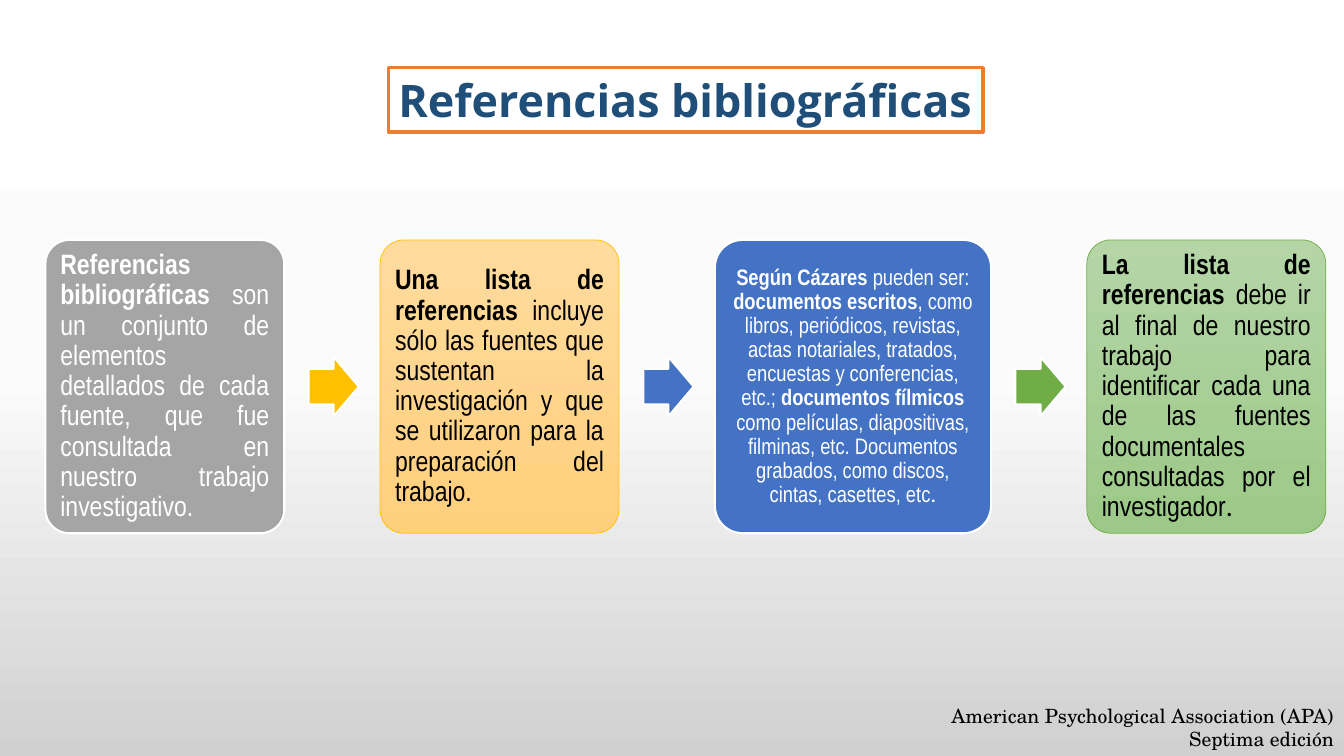
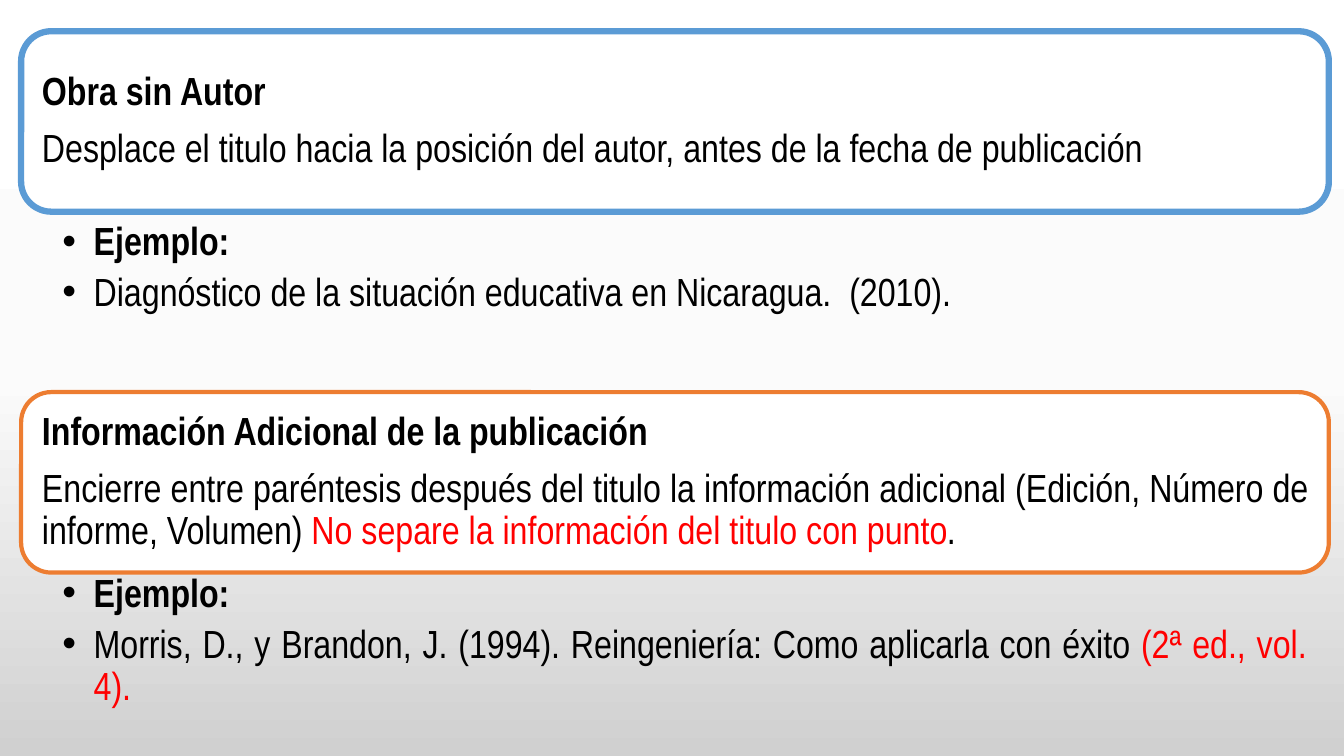
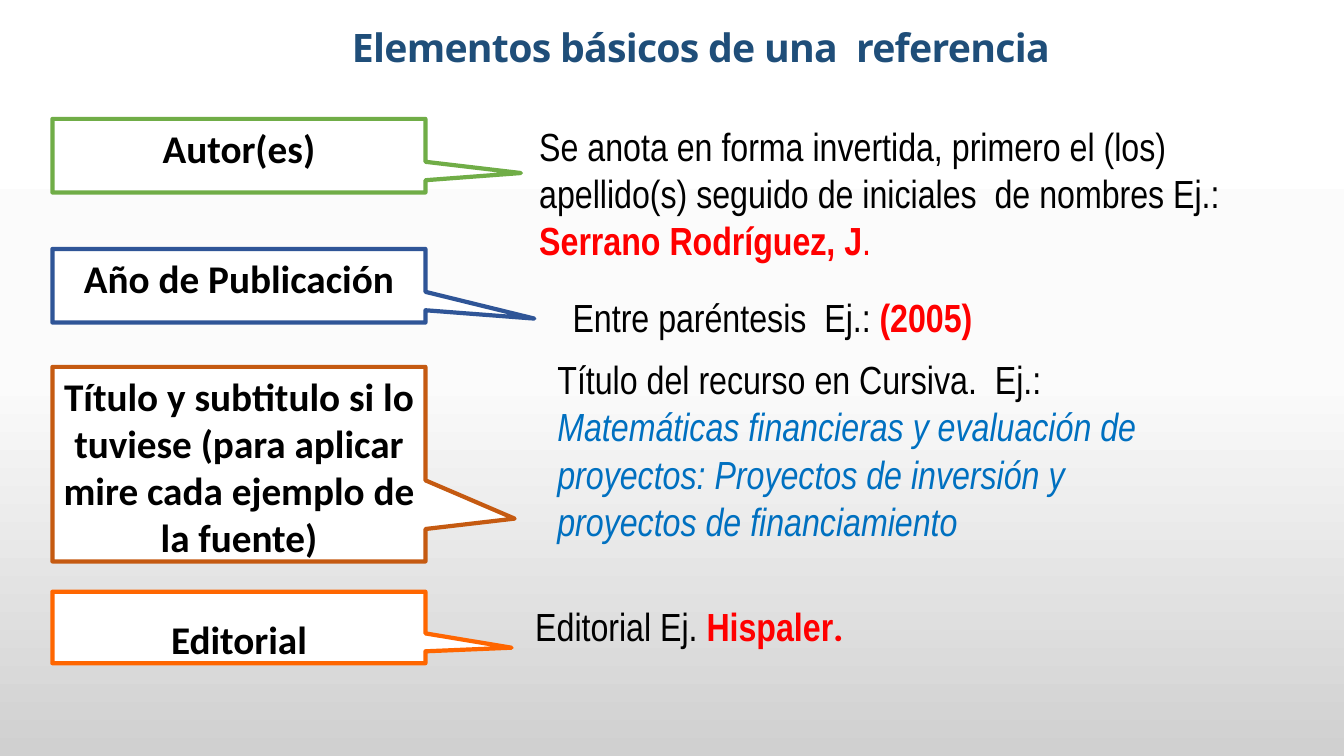
from copy import deepcopy
from dataclasses import dataclass

from pptx import Presentation
from pptx.dml.color import RGBColor
from pptx.enum import shapes as es, text as et
from pptx.util import Inches, Pt


@dataclass(frozen=True)
class Theme:
    ink: str = "000000"
    white: str = "FFFFFF"
    navy: str = "1F4E79"
    red: str = "FF0000"
    sky: str = "0070C0"
    gray: str = "A5A5A5"
    gold: str = "FFC000"
    blue: str = "4472C4"
    green: str = "70AD47"
    orange: str = "ED7D31"
    azure: str = "5B9BD5"
    royal: str = "2F5597"
    rust: str = "C55A11"
    flame: str = "FF6600"
    sand: tuple = ("FFDB9E", "FFD07C")
    mint: tuple = ("B5D5A7", "9CC987")
    back: tuple = ("FFFFFF", "FBFBFB", "D0D0D0")
    head: str = "Open Sans"
    body: str = "Arial Narrow"
    label: str = "Calibri"
    serif: str = "TeX Gyre Schola"
    huge: int = 32
    big: int = 28
    mid: int = 20
    small: int = 16
    note: int = 14


T = Theme()
KIND = es.MSO_SHAPE
AL = et.PP_ALIGN
TOP, MID = et.MSO_ANCHOR.TOP, et.MSO_ANCHOR.MIDDLE
rgb = RGBColor.from_string


def write(item, paras, size=T.big, font=T.body, color=T.ink, align=AL.LEFT,
          lead=1.0, gap=0, pad=(0.1, 0.05), anchor=TOP):
    """Fill item with paragraphs of (text, marks) runs.

    Marks: b bold, r red, i blue italic, c label font.
    """
    frame = item.text_frame
    frame.word_wrap = True
    frame.auto_size = et.MSO_AUTO_SIZE.NONE
    frame.vertical_anchor = anchor
    frame.margin_left = frame.margin_right = Inches(pad[0])
    frame.margin_top = frame.margin_bottom = Inches(pad[1])
    for i, parts in enumerate(paras):
        para = frame.add_paragraph() if i else frame.paragraphs[0]
        para.alignment = align
        para.line_spacing = lead
        para.space_before = Pt(0)
        para.space_after = Pt(gap if i < len(paras) - 1 else 0)
        for words, marks in parts:
            run = para.add_run()
            run.text = words
            face = run.font
            face.size = Pt(size)
            face.name = T.label if "c" in marks else font
            face.bold = "b" in marks
            face.italic = "i" in marks
            tint = T.red if "r" in marks else T.sky if "i" in marks else color
            face.color.rgb = rgb(tint)


def draw(slide, kind, box, fill, line, width, adj=()):
    """Add a preset shape; a pair of fill colours gives a downward gradient."""
    shape = slide.shapes.add_shape(kind, *map(Inches, box))
    shape.shadow.inherit = False
    if isinstance(fill, tuple):
        shape.fill.gradient()
        shape.fill.gradient_angle = 270
        for stop, tint in zip(shape.fill.gradient_stops, fill):
            stop.color.rgb = rgb(tint)
    else:
        shape.fill.solid()
        shape.fill.fore_color.rgb = rgb(fill)
    shape.line.color.rgb = rgb(line)
    shape.line.width = Pt(width)
    for i, value in enumerate(adj):
        shape.adjustments[i] = value
    return shape


deck = Presentation()
deck.slide_width, deck.slide_height = Inches(13.33), Inches(7.5)

# Shared background
master = deck.slide_master
fill = master.background.fill
fill.gradient()
fill.gradient_angle = 270
stops = master.element.xpath("./p:cSld/p:bg//a:gsLst")[0]
stops.insert(1, deepcopy(stops[0]))
for i, (stop, tint) in enumerate(zip(fill.gradient_stops, T.back)):
    stop.position = i / 2
    stop.color.rgb = rgb(tint)

# Shared title style
titles = []
for words, box, size, lead in (
    ("Referencias bibliográficas", (3.85, 0.67, 5.9, 0.64), T.huge, 1.0),
    ("Elementos básicos de una  referencia", (3.39, 0.27, 7.13, 0.48), T.big, 0.8),
):
    if titles:
        pair = deck.slides.add_slide(deck.slide_layouts[3])
    title = deck.slides.add_slide(deck.slide_layouts[5]).shapes.title
    title.left, title.top, title.width, title.height = map(Inches, box)
    write(title, [[(words, "b")]], size, T.head, T.navy, lead=lead, anchor=MID)
    titles.append(title)

# Slide 1: chain of cards
first, last = deck.slides[0], deck.slides[2]
titles[0].text_frame.word_wrap = False
titles[0].fill.solid()
titles[0].fill.fore_color.rgb = rgb(T.white)
titles[0].line.color.rgb = rgb(T.orange)
titles[0].line.width = Pt(2.25)

# width, fill, line, line width, text colour, size, alignment, inset, arrow, runs
cards = (
    (2.37, T.gray, T.white, 1.5, T.white, T.mid, AL.JUSTIFY, 0.08, None, [
        ("Referencias bibliográficas ", "b"),
        ("son un conjunto de elementos detallados de cada fuente, que fue "
         "consultada en nuestro trabajo investigativo.", "")]),
    (2.37, T.sand, T.gold, 0.5, T.ink, T.mid, AL.JUSTIFY, 0.08, T.gold, [
        ("Una lista de referencias ", "b"),
        ("incluye sólo las fuentes que sustentan la investigación y que se "
         "utilizaron para la preparación del trabajo.", "")]),
    (2.74, T.blue, T.white, 1.5, T.white, T.small, AL.CENTER, 0.07, T.blue, [
        ("Según Cázares", "b"), (" pueden ser: ", ""),
        ("documentos escritos", "b"),
        (", como libros, periódicos, revistas, actas notariales, tratados, "
         "encuestas y conferencias, etc.; ", ""),
        ("documentos fílmicos ", "b"),
        ("como películas, diapositivas, filminas, etc. Documentos grabados, "
         "como discos, cintas, casettes, etc", ""), (".", "c")]),
    (2.37, T.mint, T.green, 0.5, T.ink, T.mid, AL.JUSTIFY, 0.08, T.green, [
        ("La lista de referencias ", "b"),
        ("debe ir al final de nuestro trabajo para identificar cada una de las "
         "fuentes documentales consultadas por el investigador", ""),
        (".", "c")]),
)
x = 0.45
for wide, fill, line, width, color, size, align, pad, arrow, runs in cards:
    if arrow:
        draw(first, KIND.RIGHT_ARROW, (x + 0.24, 3.54, 0.5, 0.59),
             arrow, T.white, 1.5, (0.6, 0.5))
        x += 0.95
    card = draw(first, KIND.ROUNDED_RECTANGLE, (x, 2.38, wide, 2.91),
                fill, line, width, (0.1,))
    write(card, [runs], size, color=color, align=align, lead=0.9,
          pad=(pad, pad), anchor=MID)
    x += wide

note = first.shapes.add_textbox(*map(Inches, (8.95, 6.93, 4.38, 0.57)))
write(note, [[("American Psychological Association (APA)", "")],
             [("Septima edición", "")]], T.note, T.serif, align=AL.RIGHT)

# Slide 2: rule cards, each with an example list
title = pair.shapes.title.element
title.getparent().remove(title)
rules = (
    (0.31, T.azure, 4.5, 2.16, 1.18,
     [[("Obra sin Autor", "b")],
      [("Desplace el titulo hacia la posición del autor, antes de la fecha de "
        "publicación", "")]],
     [("Diagnóstico de la situación educativa en Nicaragua.  (2010).", "")]),
    (3.89, T.orange, 3, 5.65, 1.4,
     [[("Información Adicional de la publicación", "b")],
      [("Encierre entre paréntesis después del titulo la información adicional "
        "(Edición, Número de informe, Volumen) ", ""),
       ("No separe la información del titulo con punto", "r"), (".", "")]],
     [("Morris, D., y Brandon, J. (1994). Reingeniería: Como aplicarla con "
       "éxito ", ""), ("(2ª ed., vol. 4).", "r")]),
)
for i, (y, line, width, low, high, rule, sample) in enumerate(rules, 1):
    card = draw(pair, KIND.ROUNDED_RECTANGLE, (0.21, y, 12.97, 1.79),
                T.white, line, width)
    write(card, rule, align=AL.JUSTIFY, lead=0.9, gap=10, pad=(0.12, 0.12),
          anchor=MID)
    body = pair.placeholders[i]
    body.left, body.top, body.width, body.height = map(
        Inches, (0.21, low, 12.97, high))
    write(body, [[("Ejemplo:", "b")], sample], align=AL.JUSTIFY, lead=0.9,
          gap=6, pad=(0.22, 0.04))
    body.text_frame.margin_left = Inches(0.41)
    for para in body.text_frame.paragraphs:
        props = para._p.get_or_add_pPr()
        props.set("marL", str(Inches(0.31)))
        props.set("indent", str(Inches(-0.31)))

# Slide 3: callouts and their explanations
for run in titles[1].text_frame.paragraphs[0].runs:
    run.font._element.set("spc", "-50")

parts = (
    ("Autor(es)", 1.18, 0.73, (0.756, 0.236), T.green, 1.0,
     (5.25, 1.16, 7.77, 1.51),
     [("Se anota en forma invertida, primero el (los) apellido(s) seguido de "
       "iniciales  de nombres Ej.: ", ""),
      ("Serrano Rodríguez, J", "br"), (".", "r")]),
    ("Año de Publicación", 2.47, 0.73, (0.792, 0.447), T.royal, 1.0,
     (5.58, 2.86, 5.59, 0.57),
     [("Entre paréntesis  Ej.: ", ""), ("(2005)", "br")]),
    ("Título y subtitulo si lo tuviese (para aplicar mire cada ejemplo de la "
     "fuente)", 3.64, 1.93, (0.739, 0.28), T.rust, 1.0,
     (5.43, 3.48, 6.61, 2.46),
     [("Título del recurso en Cursiva.  Ej.: ", ""),
      ("Matemáticas financieras y evaluación de proyectos: Proyectos de "
       "inversión y proyectos de financiamiento", "i")]),
    ("Editorial", 5.87, 0.71, (0.731, 0.283), T.flame, 1.4,
     (5.21, 5.93, 3.49, 0.57),
     [("Editorial Ej. ", ""), ("Hispaler", "br"), (".", "brc")]),
)
for name, y, high, tip, line, lead, box, runs in parts:
    call = draw(last, KIND.RECTANGULAR_CALLOUT, (0.52, y, 3.7, high),
                T.white, line, 3, tip)
    write(call, [[(name, "b")]], font=T.label, align=AL.CENTER, lead=lead)
    write(last.shapes.add_textbox(*map(Inches, box)), [runs])

deck.save("out.pptx")
